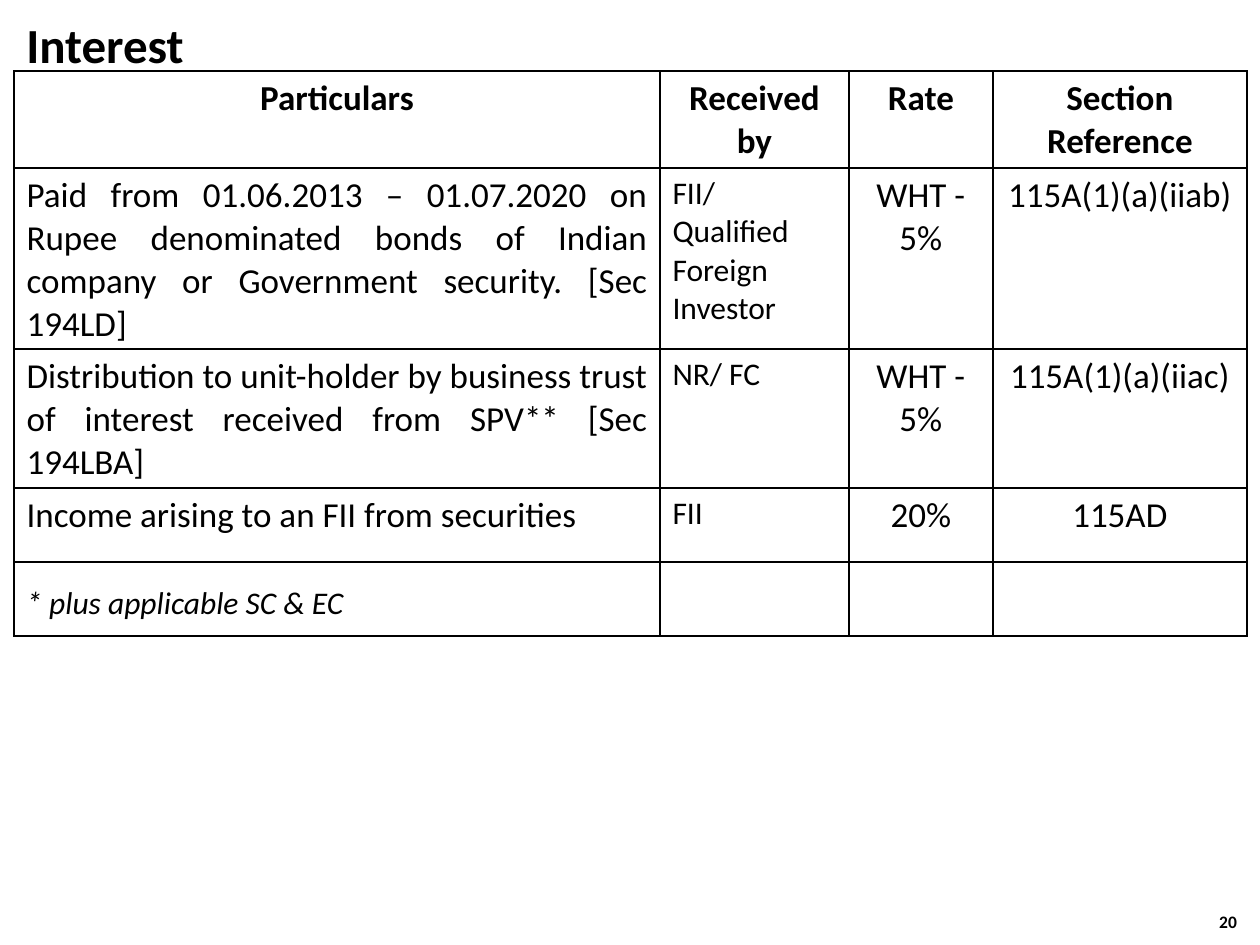
from lxml import etree
from pptx import Presentation
from pptx.dml.color import RGBColor
from pptx.enum.text import PP_ALIGN
from pptx.oxml.ns import qn
from pptx.util import Pt

PX = 914400 // 126
LEFT, CENTER, JUSTIFY = PP_ALIGN.LEFT, PP_ALIGN.CENTER, PP_ALIGN.JUSTIFY
COLORS = {"text": "000000", "border": "000000", "cell": "FFFFFF"}
FONT = "Calibri"


def write(frame, text, size, align=LEFT, bold=False, italic=False):
    frame.word_wrap = True
    para = frame.paragraphs[0]
    para.text = text
    para.alignment = align
    font = para.font
    font.name, font.size, font.bold, font.italic = FONT, Pt(size), bold, italic
    font.color.rgb = RGBColor.from_string(COLORS["text"])
    return para


def add_borders(cell):
    properties = cell._tc.get_or_add_tcPr()
    # Border lines must come before the fill in the cell properties.
    for index, side in enumerate(("lnL", "lnR", "lnT", "lnB")):
        line = etree.Element(qn(f"a:{side}"), w=str(Pt(1)))
        fill = etree.SubElement(line, qn("a:solidFill"))
        etree.SubElement(fill, qn("a:srgbClr"), val=COLORS["border"])
        properties.insert(index, line)


deck = Presentation()
deck.slide_width, deck.slide_height = 1260 * PX, 945 * PX
page = deck.slides.add_slide(deck.slide_layouts[6])

title = page.shapes.add_textbox(14 * PX, 8 * PX, 790 * PX, 72 * PX)
write(title.text_frame, "Interest", 28, bold=True)

rows = [
    ("Particulars", "Received by", "Rate", "Section Reference"),
    ("Paid from 01.06.2013 – 01.07.2020 on Rupee denominated bonds of Indian "
     "company or Government security. [Sec 194LD]",
     "FII/ Qualified Foreign Investor", "WHT - 5%", "115A(1)(a)(iiab)"),
    ("Distribution to unit-holder by business trust of interest received "
     "from SPV** [Sec 194LBA]", "NR/ FC", "WHT - 5%", "115A(1)(a)(iiac)"),
    ("Income arising to an FII from securities", "FII", "20%", "115AD"),
    ("", "", "", ""),
]
column_widths = [646, 189, 144, 254]
row_heights = [97, 181, 139, 74, 74]
column_styles = [(20, JUSTIFY), (18, LEFT), (20, CENTER), (20, CENTER)]

rates = page.shapes.add_table(
    len(rows), len(column_widths), 14 * PX, 71 * PX,
    sum(column_widths) * PX, sum(row_heights) * PX).table
rates.horz_banding = False
for column, width in zip(rates.columns, column_widths):
    column.width = width * PX
for row, height in zip(rates.rows, row_heights):
    row.height = height * PX

for r, texts in enumerate(rows):
    header = r == 0
    for c, text in enumerate(texts):
        cell = rates.cell(r, c)
        size, align = (20, CENTER) if header else column_styles[c]
        write(cell.text_frame, text, size, align, bold=header)
        cell.fill.solid()
        cell.fill.fore_color.rgb = RGBColor.from_string(COLORS["cell"])
        add_borders(cell)

footnote = page.shapes.add_textbox(14 * PX, 577 * PX, 790 * PX, 50 * PX)
write(footnote.text_frame, "* plus applicable SC & EC", 18, italic=True)

number = page.shapes.add_textbox(1194 * PX, 905 * PX, 68 * PX, 42 * PX)
write(number.text_frame, "20", 10, CENTER, bold=True).space_before = Pt(5)

deck.save("out.pptx")
